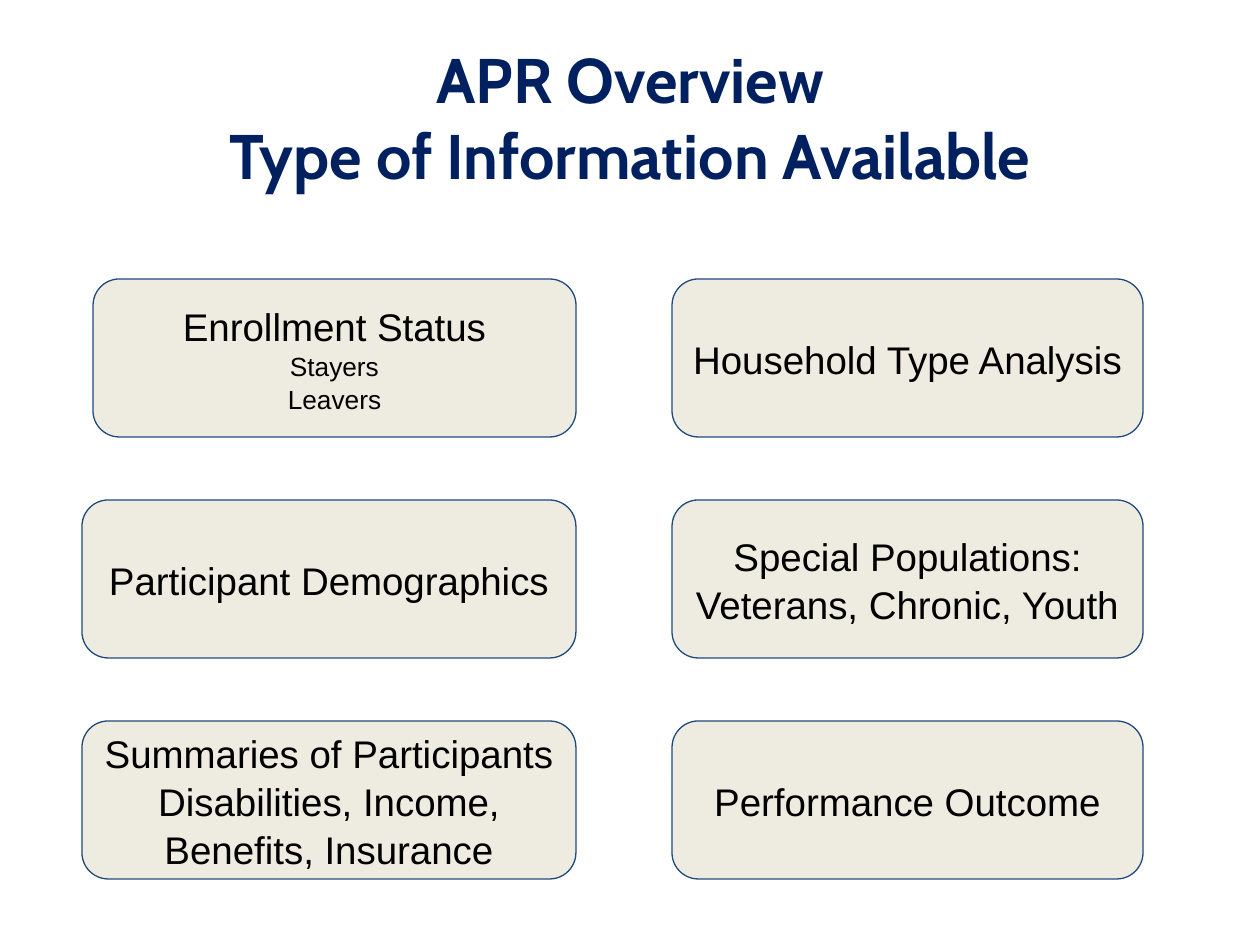
from pptx import Presentation
from pptx.dml.color import RGBColor
from pptx.enum.shapes import MSO_SHAPE
from pptx.enum.text import MSO_ANCHOR, MSO_AUTO_SIZE, PP_ALIGN
from pptx.util import Inches, Pt

PX_PER_INCH = 126
BOX_TOP, BOX_HEIGHT, ROW_PITCH = 279, 158, 221
INSET = 13
HEADING_SIZE, DETAIL_SIZE = 22, 15
LEFT_BOXES = [
    (93, 483, ["Enrollment Status", "Stayers", "Leavers"]),
    (82, 494, ["Participant Demographics"]),
    (82, 494, ["Summaries of Participants Disabilities, Income, Benefits, Insurance"]),
]
RIGHT_BOXES = [
    (672, 471, ["Household Type Analysis"]),
    (672, 471, ["Special Populations: Veterans, Chronic, Youth"]),
    (672, 471, ["Performance Outcome"]),
]


def px(length):
    """Turn a length in px into EMU."""
    return round(Inches(length / PX_PER_INCH))


def color(hex_value):
    """Turn a hex string into a colour."""
    return RGBColor.from_string(hex_value)


def format_paragraph(paragraph, font_name, size, hex_value, bold=False):
    """Centre a paragraph and format its runs."""
    paragraph.alignment = PP_ALIGN.CENTER
    for run in paragraph.runs:
        run.font.name = font_name
        run.font.size = Pt(size)
        run.font.bold = bold
        run.font.color.rgb = color(hex_value)


def set_title(slide, lines):
    """Place and format the slide title."""
    title = slide.shapes.title
    title.left, title.top, title.width, title.height = map(px, (63, 38, 1134, 157))
    text_frame = title.text_frame
    text_frame.auto_size = MSO_AUTO_SIZE.NONE
    text_frame.vertical_anchor = MSO_ANCHOR.MIDDLE
    text_frame.text = "\n".join(lines)
    for paragraph in text_frame.paragraphs:
        format_paragraph(paragraph, "Cabin", 36, "002060", bold=True)


def add_box(slide, left, top, width, lines):
    """Add a rounded box with a heading and optional detail lines."""
    shape = slide.shapes.add_shape(
        MSO_SHAPE.ROUNDED_RECTANGLE, px(left), px(top), px(width), px(BOX_HEIGHT))
    shape.shadow.inherit = False
    shape.fill.solid()
    shape.fill.fore_color.rgb = color("EEECE1")
    shape.line.color.rgb = color("1F497D")
    shape.line.width = Pt(0.75)
    text_frame = shape.text_frame
    text_frame.word_wrap = True
    text_frame.vertical_anchor = MSO_ANCHOR.MIDDLE
    text_frame.margin_left = text_frame.margin_right = px(INSET)
    text_frame.margin_top = text_frame.margin_bottom = px(INSET)
    text_frame.text = "\n".join(lines)
    for index, paragraph in enumerate(text_frame.paragraphs):
        size = DETAIL_SIZE if index else HEADING_SIZE
        format_paragraph(paragraph, "Arial", size, "000000")
        paragraph.line_spacing = 1.05


def main():
    """Build and save the slide."""
    presentation = Presentation()
    presentation.slide_width, presentation.slide_height = px(1260), px(945)
    slide = presentation.slides.add_slide(presentation.slide_layouts[5])
    set_title(slide, ["APR Overview", "Type of Information Available"])
    for column in (LEFT_BOXES, RIGHT_BOXES):
        for row, (left, width, lines) in enumerate(column):
            add_box(slide, left, BOX_TOP + row * ROW_PITCH, width, lines)
    presentation.save("out.pptx")


if __name__ == "__main__":
    main()
